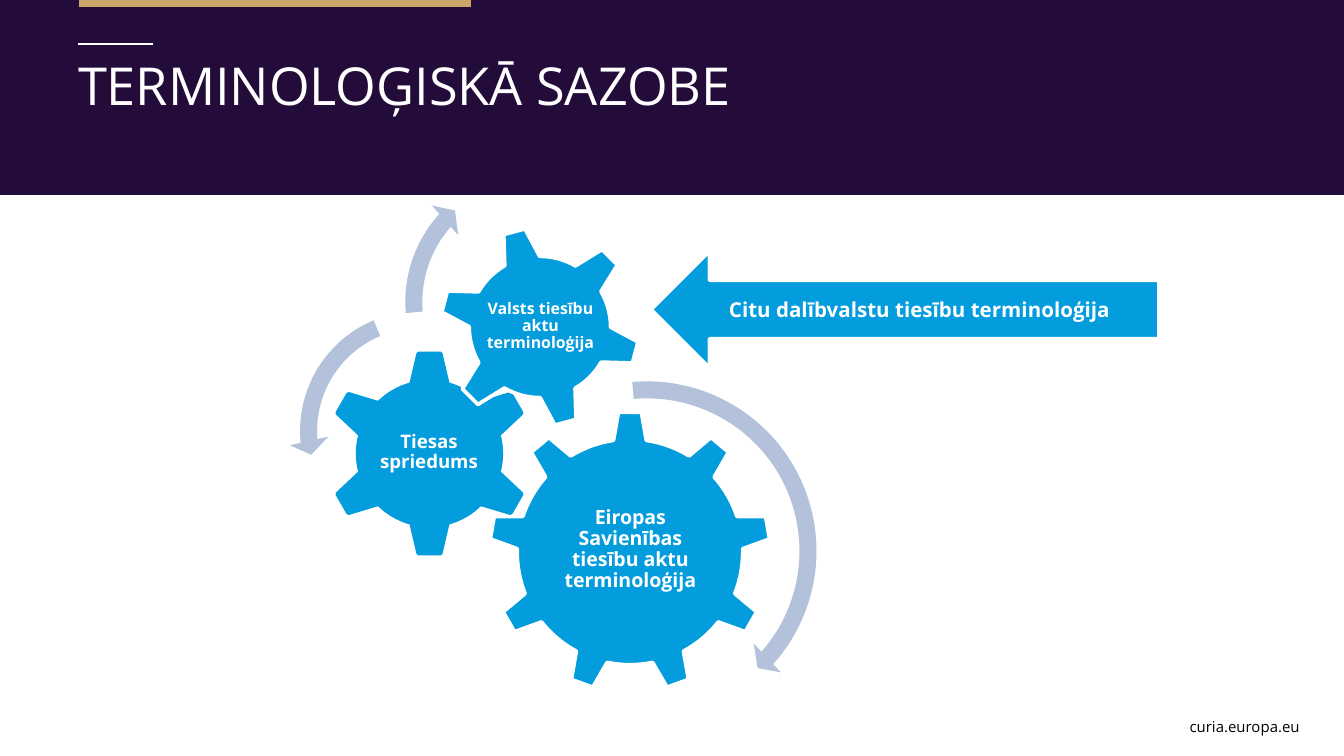
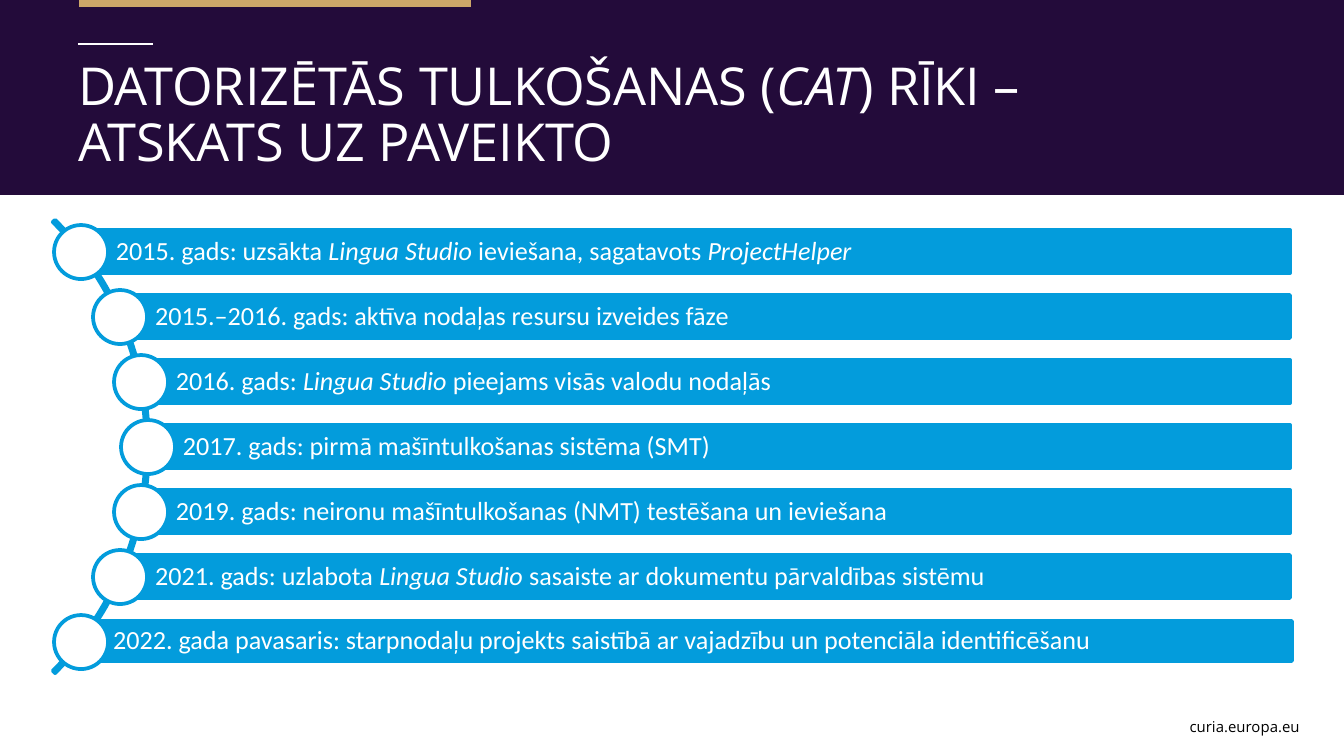
from dataclasses import dataclass
from math import sqrt
from lxml.etree import SubElement
from pptx import Presentation
from pptx.dml.color import RGBColor as RGB
from pptx.enum.shapes import MSO_CONNECTOR, MSO_SHAPE as Shape
from pptx.enum.text import MSO_ANCHOR as Anchor, MSO_AUTO_SIZE as Fit, PP_ALIGN as Align
from pptx.oxml.ns import qn
from pptx.util import Pt

PX = 6804


@dataclass(frozen=True)
class Theme:
    plum: RGB = RGB.from_string("230B3A")
    gold: RGB = RGB.from_string("CDA769")
    blue: RGB = RGB.from_string("039CDC")
    mist: RGB = RGB.from_string("B3C1DB")
    white: RGB = RGB.from_string("FFFFFF")
    black: RGB = RGB.from_string("000000")
    sans: str = "Open Sans"
    body: str = "Calibri"
    title: float = 28
    item: float = 14
    arrow: float = 11
    foot: float = 8
    edge: float = 2


look = Theme()


def write(shape, text, size, color=look.white, font=look.sans, bold=False,
          align=Align.LEFT, anchor=Anchor.MIDDLE, space=0.9, pad=(13, 7, 13, 7)):
    frame = shape.text_frame
    frame.word_wrap = True
    frame.auto_size = Fit.NONE
    frame.vertical_anchor = anchor
    frame.margin_left, frame.margin_top, frame.margin_right, frame.margin_bottom = [
        v * PX for v in pad]
    para = frame.paragraphs[0]
    para.alignment = align
    para.line_spacing = space
    for n, part in enumerate(text.split("*")):
        if part:
            run = para.add_run()
            run.text = part
            run.font.name = font
            run.font.size = Pt(size)
            run.font.bold = bold
            run.font.italic = n % 2 == 1
            run.font.color.rgb = color


def draw(slide, kind, box, fill, edge=None, adj=(), turn=0):
    shape = slide.shapes.add_shape(kind, *[v * PX for v in box])
    shape.shadow.inherit = False
    shape.fill.solid()
    shape.fill.fore_color.rgb = fill
    if edge is None:
        shape.line.fill.background()
    else:
        shape.line.color.rgb = edge
        shape.line.width = Pt(look.edge)
    for n, value in enumerate(adj):
        shape.adjustments[n] = value
    shape.rotation = turn
    return shape


deck = Presentation()
deck.slide_width = 1344 * PX
deck.slide_height = 756 * PX
layout = deck.slide_layouts[5]
for spare in list(layout.placeholders)[1:]:
    spare.element.getparent().remove(spare.element)

titles = ["TERMINOLOĢISKĀ SAZOBE",
          "DATORIZĒTĀS TULKOŠANAS (*CAT*) RĪKI – ATSKATS UZ PAVEIKTO"]
slides = []
for text in titles:
    slide = deck.slides.add_slide(layout)
    head = slide.shapes.title
    head.left, head.top, head.width, head.height = [v * PX for v in (65, 53, 1083, 137)]
    write(head, text, look.title, anchor=Anchor.TOP)
    slides.append(slide)
gears, steps = slides

shared = [draw(gears, Shape.RECTANGLE, (0, 0, 1344, 195), look.plum)]
for left, right, y, color, width in [(79, 471, 3, look.gold, 4.5),
                                     (78, 153, 44, look.white, 1)]:
    rule = gears.shapes.add_connector(
        MSO_CONNECTOR.STRAIGHT, left * PX, y * PX, right * PX, y * PX)
    rule.line.color.rgb = color
    rule.line.width = Pt(width)
    SubElement(rule.element.spPr, qn("a:effectLst"))
    shared.append(rule)
foot = gears.shapes.add_textbox(*[v * PX for v in (1027, 711, 286, 31)])
write(foot, "curia.europa.eu", look.foot, color=look.black, align=Align.RIGHT,
      anchor=Anchor.TOP, space=1)
shared.append(foot)
for part in shared:
    layout.shapes.element.append(part.element)

wheels = [
    (Shape.GEAR_9, (489, 411, 282, 282), look.white, 0,
     "Eiropas Savienības tiesību aktu terminoloģija", 10.5, (546, 477, 169, 145)),
    (Shape.GEAR_6, (327, 351, 205, 205), look.blue, 0,
     "Tiesas spriedums", 10, (378, 402, 102, 101)),
    (Shape.GEAR_6, (439, 226, 202, 202), look.white, 345,
     "Valsts tiesību aktu terminoloģija", 8.5, (484, 270, 113, 113)),
]
for kind, box, edge, turn, text, size, area in wheels:
    draw(gears, kind, box, look.blue, edge, turn=turn)
    label = gears.shapes.add_textbox(*[v * PX for v in area])
    write(label, text, size, bold=True, align=Align.CENTER, pad=(2, 2, 2, 2))

swirls = [
    (Shape.CIRCULAR_ARROW, (466, 370, 362, 362), (0.047, 2.99, 24.968, 159.035, 0.055)),
    (Shape.LEFT_CIRCULAR_ARROW, (289, 300, 262, 262), (0.065, 4.3, 104.891, 148.378, 0.075)),
    (Shape.CIRCULAR_ARROW, (394, 160, 284, 284), (0.06, 3.941, 133.138, 105.082, 0.07)),
]
for kind, box, adj in swirls:
    draw(gears, kind, box, look.mist, adj=adj)

arrow = draw(gears, Shape.LEFT_ARROW, (651, 251, 508, 117), look.blue, look.white)
write(arrow, "Citu dalībvalstu tiesību terminoloģija", look.arrow, bold=True,
      align=Align.CENTER, space=1)

items = [
    "2015. gads: uzsākta *Lingua Studio* ieviešana, sagatavots *ProjectHelper*",
    "2015.–2016. gads: aktīva nodaļas resursu izveides fāze",
    "2016. gads: *Lingua Studio* pieejams visās valodu nodaļās",
    "2017. gads: pirmā mašīntulkošanas sistēma (SMT)",
    "2019. gads: neironu mašīntulkošanas (NMT) testēšana un ieviešana",
    "2021. gads: uzlabota *Lingua Studio* sasaiste ar dokumentu pārvaldības sistēmu",
    "2022. gada pavasaris: starpnodaļu projekts saistībā ar vajadzību un potenciāla identificēšanu",
]
mid_x, mid_y, reach, pitch, dot = -171, 447, 319, 65, 54
draw(steps, Shape.BLOCK_ARC, (mid_x - 321, mid_y - 321, 641, 641), look.blue, look.blue,
     adj=(189, 27, 0.005))
for n, text in enumerate(items):
    drop = pitch * (n - len(items) // 2)
    x = mid_x + round(sqrt(reach ** 2 - drop ** 2))
    y = mid_y + drop
    left, top, right, high = x, y - 22, 1290, 43
    if n == len(items) - 1:
        left, top, right, high = x - 3, y - 21, 1292, 40
    bar = draw(steps, Shape.RECTANGLE, (left, top, right - left, high), look.blue, look.blue)
    write(bar, text, look.item, font=look.body, pad=(35, 5, 5, 5))
    draw(steps, Shape.OVAL, (x - dot // 2, y - dot // 2, dot, dot), look.white, look.blue)

deck.save("out.pptx")
